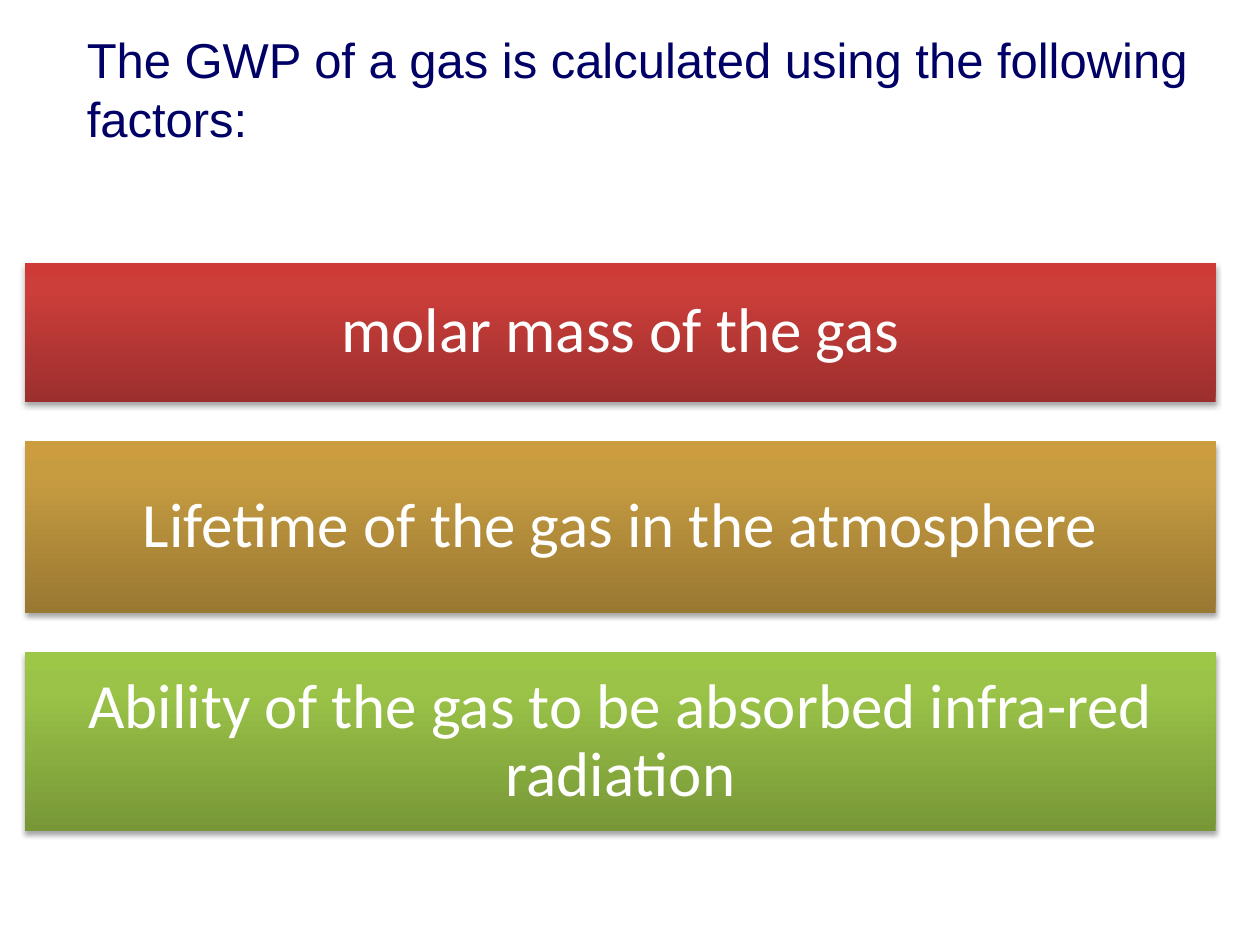
from pptx import Presentation
from pptx.dml.color import RGBColor
from pptx.enum.shapes import MSO_SHAPE as Shape
from pptx.enum.text import MSO_ANCHOR as Anchor, MSO_AUTO_SIZE as Auto, PP_ALIGN as Align
from pptx.oxml import parse_xml
from pptx.oxml.ns import nsdecls
from pptx.util import Cm, Pt

# Content: text, height in cm, gradient from bottom to top
TITLE = "The GWP of a gas is calculated using the following factors:"
BARS = [
    ("molar mass of the gas", 2.79, ("9C2F2D", "CB3E3A", "CE3B37")),
    ("Lifetime of the gas in the atmosphere", 3.45, ("997832", "C79C41", "CB9D3F")),
    ("Ability of the gas to be absorbed infra-red radiation", 3.61,
     ("779737", "9BC348", "9DC746")),
]
STOPS = (0, 80, 100)
LEFT, TOP, WIDTH, GAP = 0.51, 5.31, 24, 0.8


def color(text):
    return RGBColor.from_string(text)


def write(shape, text, size, font, ink, align=Align.LEFT, anchor=Anchor.TOP,
          inset=0.25, spacing=1.0):
    frame = shape.text_frame
    frame.word_wrap = True
    frame.auto_size = Auto.NONE
    frame.vertical_anchor = anchor
    frame.margin_left = frame.margin_right = Cm(0.25)
    frame.margin_top = frame.margin_bottom = Cm(inset)
    para = frame.paragraphs[0]
    para.alignment = align
    para.line_spacing = spacing
    run = para.add_run()
    run.text = text
    run.font.size = Pt(size)
    run.font.name = font
    run.font.color.rgb = color(ink)


def shade(shape, tones):
    """Upward gradient, no outline, soft shadow below."""
    stops = "".join(
        f'<a:gs pos="{pos * 1000}"><a:srgbClr val="{tone}"/></a:gs>'
        for pos, tone in zip(STOPS, tones))
    props = shape.element.spPr
    props.append(parse_xml(
        f'<a:gradFill {nsdecls("a")} rotWithShape="1"><a:gsLst>{stops}</a:gsLst>'
        '<a:lin ang="16200000" scaled="0"/></a:gradFill>'))
    shape.line.fill.background()
    props.append(parse_xml(
        f'<a:effectLst {nsdecls("a")}>'
        f'<a:outerShdw blurRad="{Pt(3.1)}" dist="{Pt(1.8)}" dir="5400000" rotWithShape="0">'
        '<a:srgbClr val="000000"><a:alpha val="35000"/></a:srgbClr>'
        '</a:outerShdw></a:effectLst>'))


deck = Presentation()
deck.slide_width, deck.slide_height = Cm(25.4), Cm(19.05)
slide = deck.slides.add_slide(deck.slide_layouts[5])

# Title
title = slide.shapes.title
title.left, title.top, title.width, title.height = Cm(1.5), Cm(0.46), Cm(22.99), Cm(2.64)
write(title, TITLE, 28, "Arial", "010066", inset=0.13)

# Stacked factor bars
top = TOP
for text, height, tones in BARS:
    bar = slide.shapes.add_shape(Shape.RECTANGLE, Cm(LEFT), Cm(top), Cm(WIDTH), Cm(height))
    shade(bar, tones)
    write(bar, text, 36, "Calibri", "FFFFFF", align=Align.CENTER,
          anchor=Anchor.MIDDLE, spacing=0.9)
    top += height + GAP

deck.save("out.pptx")
